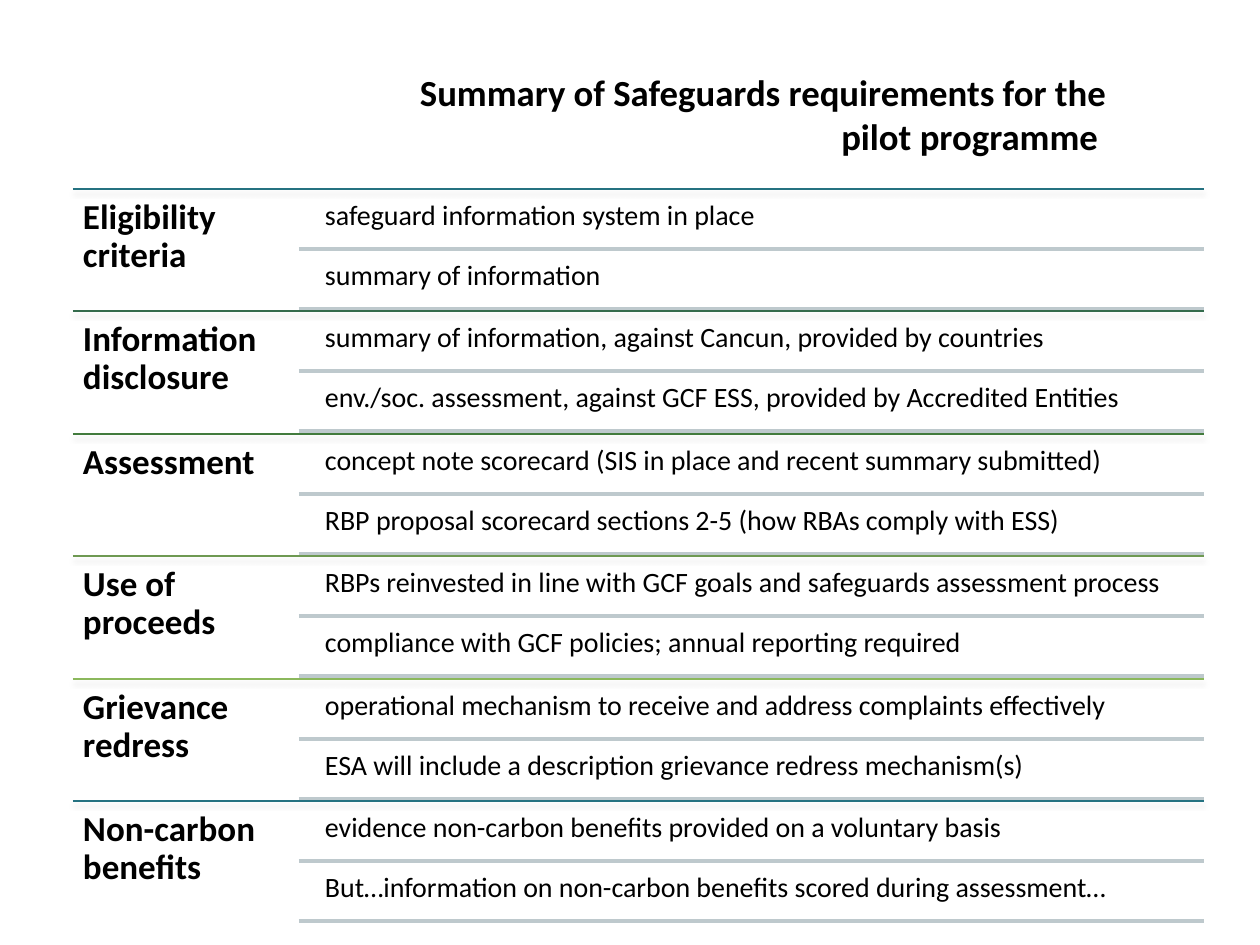
from lxml import etree
from pptx import Presentation
from pptx.dml.color import RGBColor
from pptx.enum.shapes import MSO_CONNECTOR
from pptx.enum.text import MSO_ANCHOR, MSO_AUTO_SIZE, PP_ALIGN
from pptx.oxml import parse_xml
from pptx.oxml.ns import nsdecls, qn
from pptx.util import Pt

STRAIGHT = MSO_CONNECTOR.STRAIGHT
TOP = MSO_ANCHOR.TOP
NO_AUTOFIT = MSO_AUTO_SIZE.NONE
RIGHT = PP_ALIGN.RIGHT
PX = 914400 / 126
LEFT_EDGE, ITEM_RULE_LEFT, ITEM_LEFT, RIGHT_EDGE = 73, 299, 316, 1204
SHADOW = (
    f'<a:effectLst {nsdecls("a")}>'
    '<a:outerShdw blurRad="40000" dist="23000" dir="5400000" rotWithShape="0">'
    '<a:srgbClr val="000000"><a:alpha val="35000"/></a:srgbClr>'
    '</a:outerShdw></a:effectLst>'
)

SECTIONS = [
    ("Eligibility criteria", "257281", [
        "safeguard information system in place",
        "summary of information",
    ]),
    ("Information disclosure", "346B4C", [
        "summary of information, against Cancun, provided by countries",
        "env./soc. assessment, against GCF ESS, provided by Accredited Entities",
    ]),
    ("Assessment", "427B3D", [
        "concept note scorecard (SIS in place and recent summary submitted)",
        "RBP proposal scorecard sections 2-5 (how RBAs comply with ESS)",
    ]),
    ("Use of proceeds", "6E9952", [
        "RBPs reinvested in line with GCF goals and safeguards assessment process",
        "compliance with GCF policies; annual reporting required",
    ]),
    ("Grievance redress", "8BB85C", [
        "operational mechanism to receive and address complaints effectively",
        "ESA will include a description grievance redress mechanism(s)",
    ]),
    ("Non-carbon benefits", "257281", [
        "evidence non-carbon benefits provided on a voluntary basis",
        "But…information on non-carbon benefits scored during assessment…",
    ]),
]

prs = Presentation()
prs.slide_width = round(1260 * PX)
prs.slide_height = round(945 * PX)
slide = prs.slides.add_slide(prs.slide_layouts[5])


def add_rule(left, y, color, width):
    rule = slide.shapes.add_connector(
        STRAIGHT, *(round(v * PX) for v in (left, y, RIGHT_EDGE, y)))
    rule.line.color.rgb = RGBColor.from_string(color)
    rule.line.width = Pt(width)
    effects = etree.SubElement(rule._element.spPr, qn("a:effectLst"))
    return effects


def add_label(text, left, top, width, height, inset, size, bold):
    box = slide.shapes.add_textbox(
        *(round(v * PX) for v in (left, top, width, height)))
    frame = box.text_frame
    frame.word_wrap = True
    frame.vertical_anchor = TOP
    frame.margin_left = frame.margin_right = round(inset * PX)
    frame.margin_top = frame.margin_bottom = round(inset * PX)
    paragraph = frame.paragraphs[0]
    paragraph.text = text
    paragraph.line_spacing = 0.9
    paragraph.font.name = "Calibri"
    paragraph.font.size = Pt(size)
    paragraph.font.bold = bold
    paragraph.font.color.rgb = RGBColor.from_string("000000")


title = slide.shapes.title
title.left, title.top, title.width, title.height = (
    round(v * PX) for v in (387, 63, 732, 102))
title.text_frame.word_wrap = True
title.text_frame.auto_size = NO_AUTOFIT
title.text_frame.vertical_anchor = TOP
heading = title.text_frame.paragraphs[0]
heading.text = "Summary of Safeguards requirements for the pilot programme "
heading.alignment = RIGHT
heading.font.name = "Calibri"
heading.font.size = Pt(21)
heading.font.bold = True
heading.font.color.rgb = RGBColor.from_string("000000")

for section_index, (section, color, items) in enumerate(SECTIONS):
    section_top = 189 + section_index * 245 // 2
    effects = add_rule(LEFT_EDGE, section_top, color, 0.75)
    effects.append(parse_xml(SHADOW)[0])
    add_label(section, LEFT_EDGE, section_top, 226, 122, 10, 20, True)
    for item_index, item in enumerate(items):
        item_top = section_top + 3 + item_index * 60
        add_label(item, ITEM_LEFT, item_top, RIGHT_EDGE - ITEM_LEFT, 57, 9, 16, False)
        add_rule(ITEM_RULE_LEFT, item_top + 57, "BEC9CD", 2)

prs.save("out.pptx")
